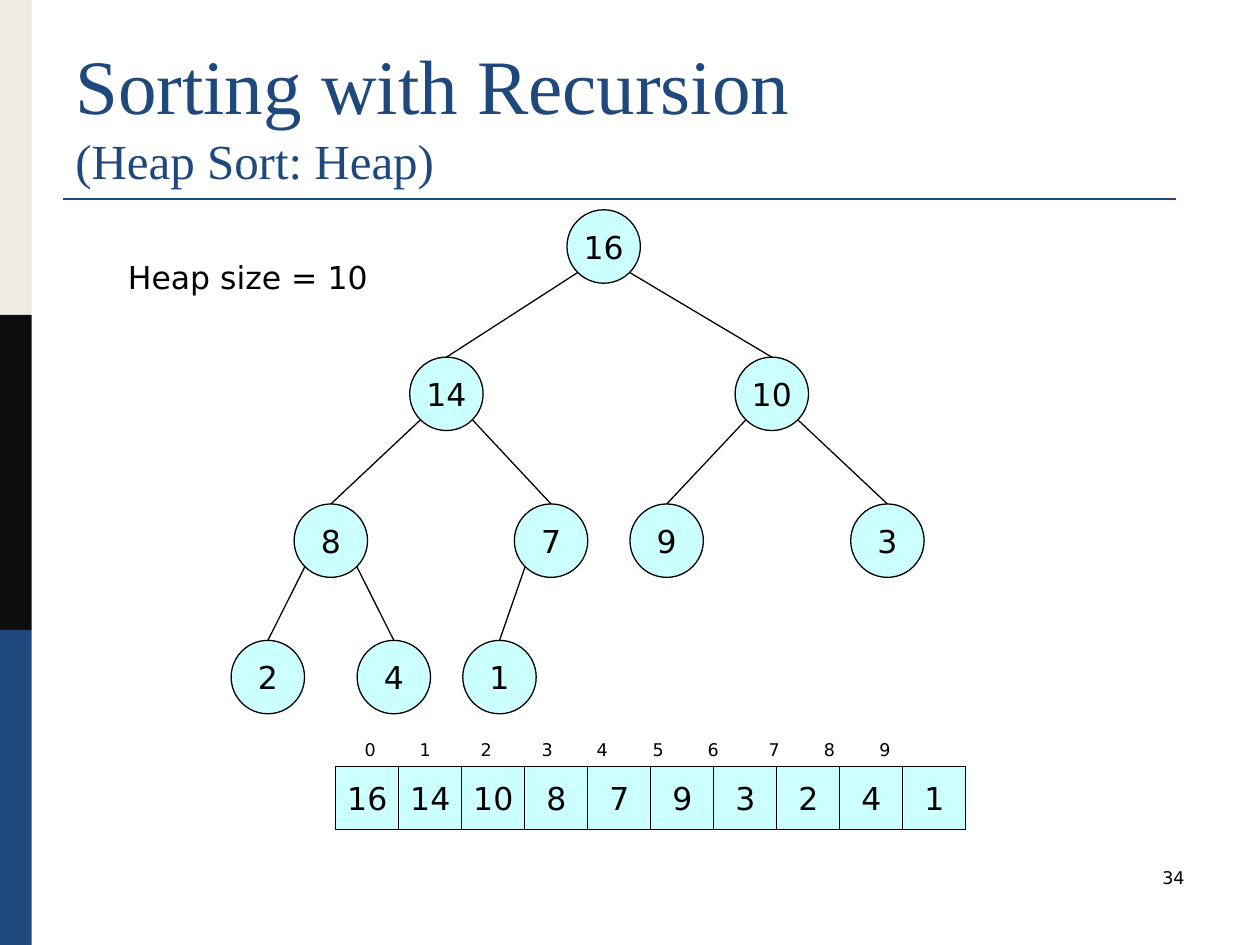
from math import sqrt
from lxml.etree import SubElement
from pptx import Presentation
from pptx.dml.color import RGBColor as RGB
from pptx.enum.shapes import MSO_CONNECTOR as LINK, MSO_SHAPE as SHAPE
from pptx.enum.text import MSO_ANCHOR as ANCHOR, PP_ALIGN as ALIGN
from pptx.oxml.ns import qn
from pptx.util import Cm, Pt

HUES = {"cream": "EEECE1", "dark": "0C0C0C", "navy": "1F497D",
        "aqua": "CCFFFF", "black": "000000"}
SANS, SERIF = "DejaVu Sans", "Times New Roman"
HEAP = [16, 14, 10, 8, 7, 9, 3, 2, 4, 1]


def write(par, text, size, font=SANS, hue="black"):
    run = par.add_run()
    run.text = text
    run.font.size = Pt(size)
    run.font.name = font
    run.font.color.rgb = RGB.from_string(HUES[hue])


def link(x1, y1, x2, y2, hue="black", width=0.75):
    """Draw a straight line without a shadow, ends in cm."""
    line = slide.shapes.add_connector(LINK.STRAIGHT, Cm(x1), Cm(y1), Cm(x2), Cm(y2))
    line.line.color.rgb = RGB.from_string(HUES[hue])
    line.line.width = Pt(width)
    SubElement(line._element.spPr, qn("a:effectLst"))
    return line


deck = Presentation()
deck.slide_width, deck.slide_height = Cm(25.4), Cm(19.05)
slide = deck.slides.add_slide(deck.slide_layouts[6])

# Side bands and title rule
for row, hue in enumerate(["cream", "dark", "navy"]):
    band = slide.shapes.add_shape(SHAPE.RECTANGLE, 0, Cm(6.35 * row), Cm(0.64), Cm(6.35))
    band.shadow.inherit = False
    band.fill.solid()
    band.fill.fore_color.rgb = RGB.from_string(HUES[hue])
    band.line.fill.background()
link(1.27, 4.01, 23.71, 4.01, "navy", 1.5)

# Title, page number and heap size
title = slide.shapes.add_textbox(Cm(1.27), Cm(0.76), Cm(22.86), Cm(3.18)).text_frame
title.word_wrap = True
title.vertical_anchor = ANCHOR.BOTTOM
par = title.paragraphs[0]
write(par, "Sorting with Recursion", 44, SERIF, "navy")
par.add_line_break()
write(par, "(Heap Sort: Heap)", 28, SERIF, "navy")

page = slide.shapes.add_textbox(Cm(18.2), Cm(17.36), Cm(5.93), Cm(1.27)).text_frame
page.word_wrap = True
page.paragraphs[0].alignment = ALIGN.RIGHT
write(page.paragraphs[0], "34", 10)

label = slide.shapes.add_textbox(Cm(2.33), Cm(5.08), Cm(6.35), Cm(1.02)).text_frame
label.word_wrap = True
write(label.paragraphs[0], "Heap size = 10", 18)

# Tree nodes by level, then the array cells in a row
SIZE, CELL = 1.48, 1.27
levels = [(4.23, [11.43]),
          (7.2, [8.26, 14.82]),
          (10.16, [5.93, 10.37, 12.7, 17.15]),
          (12.91, [4.66, 7.2, 9.33])]
spots = [(x, y) for y, xs in levels for x in xs]
cells = [(6.77 + CELL * i, 15.45) for i in range(len(HEAP))]
nodes = []
for kind, size, places in [(SHAPE.OVAL, SIZE, spots), (SHAPE.RECTANGLE, CELL, cells)]:
    for value, (x, y) in zip(HEAP, places):
        node = slide.shapes.add_shape(kind, Cm(x), Cm(y), Cm(size), Cm(size))
        node.shadow.inherit = False
        node.fill.solid()
        node.fill.fore_color.rgb = RGB.from_string(HUES["aqua"])
        node.line.color.rgb = RGB.from_string(HUES["black"])
        node.line.width = Pt(0.75)
        frame = node.text_frame
        frame.word_wrap = False
        frame.vertical_anchor = ANCHOR.MIDDLE
        frame.paragraphs[0].alignment = ALIGN.CENTER
        write(frame.paragraphs[0], str(value), 18)
        nodes.append(node)

# Edges run from a parent's lower diagonal to the top of its child
half = SIZE / 2
slant = half / sqrt(2)
for child in range(1, len(HEAP)):
    px, py = spots[(child - 1) // 2]
    cx, cy = spots[child]
    side = -1 if child % 2 else 1
    edge = link(px + half + side * slant, py + half + slant, cx + half, cy)
    edge.end_connect(nodes[child], 0)

# Array indices on centred tab stops
index = slide.shapes.add_textbox(Cm(6.99), Cm(14.78), Cm(12.5), Cm(0.69)).text_frame
index.word_wrap = True
index.margin_left = Cm(0.36)
par = index.paragraphs[0]
tabs = SubElement(par._p.get_or_add_pPr(), qn("a:tabLst"))
for stop in [1.22, 2.45, 3.68, 4.79, 5.92, 7.03, 8.26, 9.37, 10.49]:
    SubElement(tabs, qn("a:tab"), pos=str(Cm(stop)), algn="ctr")
write(par, "\t".join(str(i) for i in range(len(HEAP))), 10)

deck.save("out.pptx")
